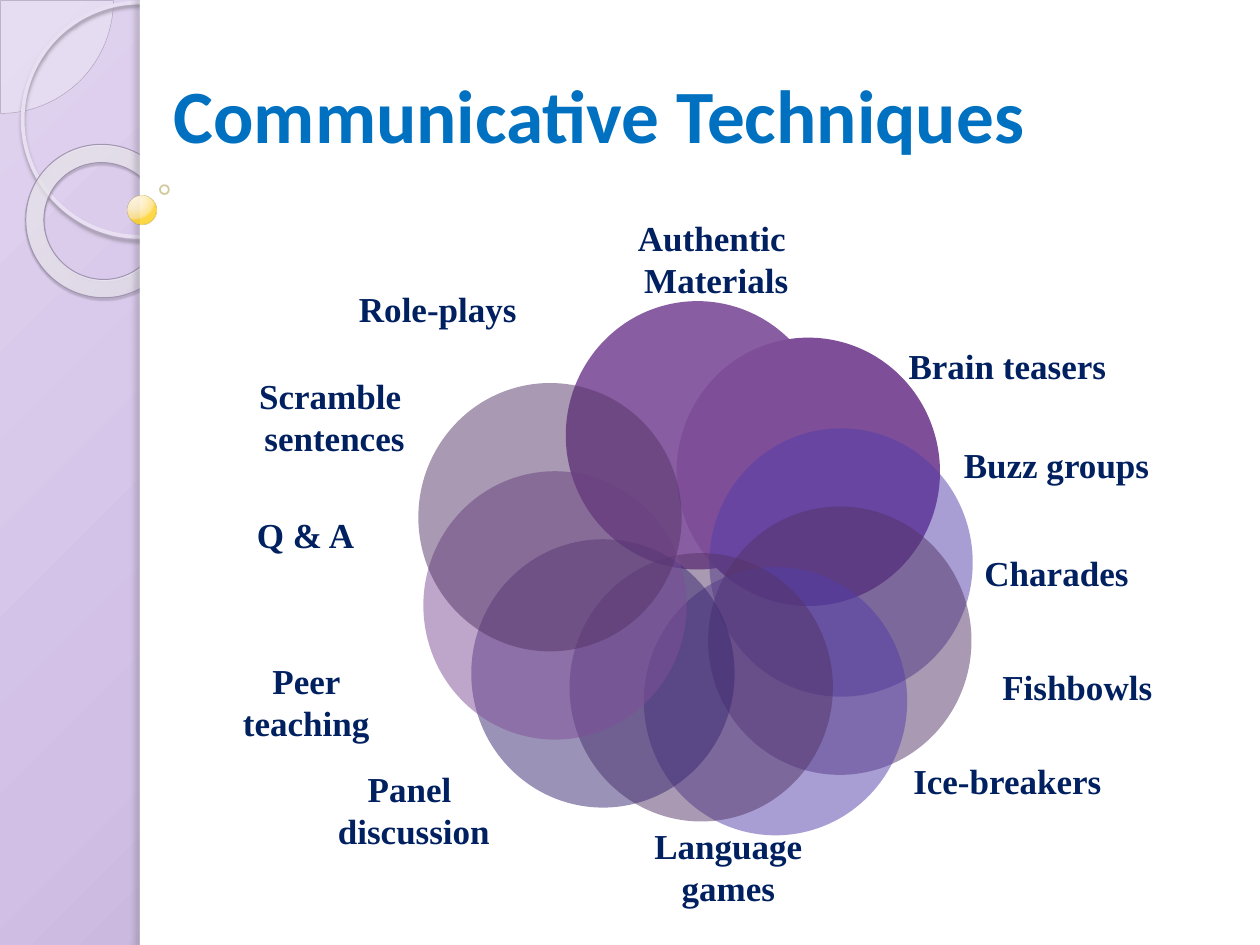
from lxml import etree
from pptx import Presentation
from pptx.dml import color
from pptx.enum import shapes, text
from pptx.oxml import ns
from pptx.util import Inches, Pt

THEME = {
    "title": "0070C0", "label": "002060", "paper": "FFFFFF",
    "plum": "7E4E99", "indigo": "533EA9", "grape": "543466", "navy": "382971",
    "title_font": "Calibri", "label_font": "Times New Roman",
    "title_size": 43, "label_size": 20,
}
TITLE = ("Communicative Techniques", (1.28, 0.13, 8.1, 1.18))
PETAL_SIZE = (2.09, 2.13)
TECHNIQUES = [
    (["Authentic ", "Materials"], (4.48, 1.62, 2.41, 0.86), (4.49, 2.39), "plum", 91),
    (["Brain teasers"], (6.95, 2.54, 2.09, 0.72), (5.37, 2.68), "plum", 100),
    (["Buzz groups"], (7.34, 3.42, 2.09, 0.53), (5.63, 3.4), "indigo", 50),
    (["Charades"], (7.34, 4.28, 2.09, 0.53), (5.62, 4.02), "grape", 50),
    (["Fishbowls"], (7.49, 5.18, 2.12, 0.53), (5.11, 4.5), "indigo", 50),
    (["Ice-breakers"], (6.95, 5.93, 2.09, 0.53), (4.52, 4.39), "grape", 50),
    (["Language ", "games "], (4.77, 6.69, 2.09, 0.37), (3.74, 4.28), "navy", 50),
    (["Panel ", "discussion"], (2.24, 6.16, 2.09, 0.53), (3.36, 3.74), "plum", 50),
    (["Peer ", "teaching "], (1.42, 5.3, 2.09, 0.53), (3.32, 3.04), "grape", 50),
    (["Q & A"], (1.38, 3.98, 2.09, 0.53), None, None, None),
    (["Scramble ", "sentences"], (1.61, 3.04, 2.09, 0.53), None, None, None),
    (["Role-plays"], (2.43, 2.18, 2.09, 0.53), None, None, None),
]
BACKGROUND = ([(0, "E0D3EF", 100), (40, "D1BFE6", 100), (100, "9A8AAD", 100)],
              (-24, -20, 124, 120))
RING = ([(0, "F9F7FB", 70), (70, "FCFBFE", 55), (100, "B099CA", 60)],
        (-408, -50, 508, 150))
BEAD = ([(0, "FFF7E2", 95), (50, "FFF0C5", 90), (95, "FFE07C", 88), (100, "FFD327", 85)],
        (25, 12, 75, 88))
KIND = shapes.MSO_SHAPE
DECOR = [
    (KIND.PIE, (-0.89, -0.89, 1.79, 1.79),
     {"fill": "F6F4F9", "alpha": 33, "line": ("ACA0B9", 0.25, 100), "adjust": [0, 54]}),
    (KIND.OVAL, (0.18, 0.02, 1.86, 1.86),
     {"line": ("E8E0F2", 2.15, 100), "shadow": ("958D9D", 85, 2, 2, 90)}),
    (KIND.DONUT, (0.2, 1.15, 1.23, 1.21),
     {"gradient": RING, "line": ("A094AF", 0.58, 100), "adjust": [0.12],
      "rotation": 38.6, "shadow": ("4A4550", 35, 1, 1.2, 75)}),
    (KIND.RECTANGLE, (1.11, 0, 8.89, 7.5), {"fill": THEME["paper"]}),
    (KIND.RECTANGLE, (1.11, 0, 0.08, 7.5),
     {"fill": THEME["paper"], "shadow": ("646068", 25, 3, 3, 180)}),
    (KIND.OVAL, (1.01, 1.55, 0.23, 0.23), {"gradient": BEAD, "line": ("CAB45C", 0.16, 60)}),
    (KIND.OVAL, (1.27, 1.47, 0.07, 0.07), {"line": ("B6A35A", 1, 60)}),
]


def child(parent, tag, **attrs):
    return etree.SubElement(parent, ns.qn(tag), {k: str(v) for k, v in attrs.items()})


def add_color(parent, rgb, alpha):
    child(child(parent, "a:srgbClr", val=rgb), "a:alpha", val=alpha * 1000)


def set_gradient(parent, stops, focus):
    old = parent.find(ns.qn("a:solidFill"))
    grad = etree.Element(ns.qn("a:gradFill"), rotWithShape="1")
    parent.replace(old, grad)
    stop_list = child(grad, "a:gsLst")
    for pos, rgb, alpha in stops:
        add_color(child(stop_list, "a:gs", pos=pos * 1000), rgb, alpha)
    edges = {side: value * 1000 for side, value in zip("ltrb", focus)}
    child(child(grad, "a:path", path="circle"), "a:fillToRect", **edges)


def set_solid(fill, owner, rgb, alpha):
    fill.solid()
    fill.fore_color.rgb = color.RGBColor.from_string(rgb)
    if alpha < 100:
        clr = owner.find(ns.qn("a:solidFill"))[0]
        child(clr, "a:alpha", val=alpha * 1000)


def add_shape(s, kind, box, fill=None, alpha=100, gradient=None, line=None,
              adjust=(), rotation=0, shadow=None):
    sp = s.shapes.add_shape(kind, *map(Inches, box))
    props = sp._element.spPr
    sp.rotation = rotation
    for i, value in enumerate(adjust):
        sp.adjustments[i] = value
    if gradient:
        sp.fill.solid()
        set_gradient(props, *gradient)
    elif fill:
        set_solid(sp.fill, props, fill, alpha)
    else:
        sp.fill.background()
    if line:
        rgb, width, line_alpha = line
        sp.line.width = Pt(width)
        set_solid(sp.line.fill, props.find(ns.qn("a:ln")), rgb, line_alpha)
    else:
        sp.line.fill.background()
    sp.shadow.inherit = False
    if shadow:
        rgb, opacity, blur, dist, angle = shadow
        outer = child(props.find(ns.qn("a:effectLst")), "a:outerShdw", blurRad=Pt(blur),
                      dist=Pt(dist), dir=angle * 60000, algn="ctr", rotWithShape=0)
        add_color(outer, rgb, opacity)
    return sp


def add_text(s, lines, box, *, font, size, rgb, align, anchor, wrap=False, inset=0):
    tf = s.shapes.add_textbox(*map(Inches, box)).text_frame
    tf.word_wrap = wrap
    tf.vertical_anchor = anchor
    tf.margin_left = tf.margin_right = Inches(inset)
    tf.margin_top = tf.margin_bottom = Inches(inset / 2)
    for i, line in enumerate(lines):
        p = tf.add_paragraph() if i else tf.paragraphs[0]
        p.alignment = align
        r = p.add_run()
        r.text = line
        r.font.name, r.font.size, r.font.bold = font, Pt(size), True
        r.font.color.rgb = color.RGBColor.from_string(rgb)


def main():
    prs = Presentation()
    prs.slide_width, prs.slide_height = Inches(10), Inches(7.5)
    s = prs.slides.add_slide(prs.slide_layouts[6])
    s.background.fill.solid()
    set_gradient(s._element.find(".//" + ns.qn("p:bgPr")), *BACKGROUND)
    for kind, box, style in DECOR:
        add_shape(s, kind, box, **style)
    title, title_box = TITLE
    add_text(s, [title], title_box, font=THEME["title_font"], size=THEME["title_size"],
             rgb=THEME["title"], align=text.PP_ALIGN.LEFT,
             anchor=text.MSO_ANCHOR.BOTTOM, wrap=True, inset=0.1)
    for lines, box, petal, tint, alpha in TECHNIQUES:
        add_text(s, lines, box, font=THEME["label_font"], size=THEME["label_size"],
                 rgb=THEME["label"], align=text.PP_ALIGN.CENTER,
                 anchor=text.MSO_ANCHOR.MIDDLE)
        if petal:
            add_shape(s, KIND.OVAL, petal + PETAL_SIZE, fill=THEME[tint], alpha=alpha)
    prs.save("out.pptx")


if __name__ == "__main__":
    main()
